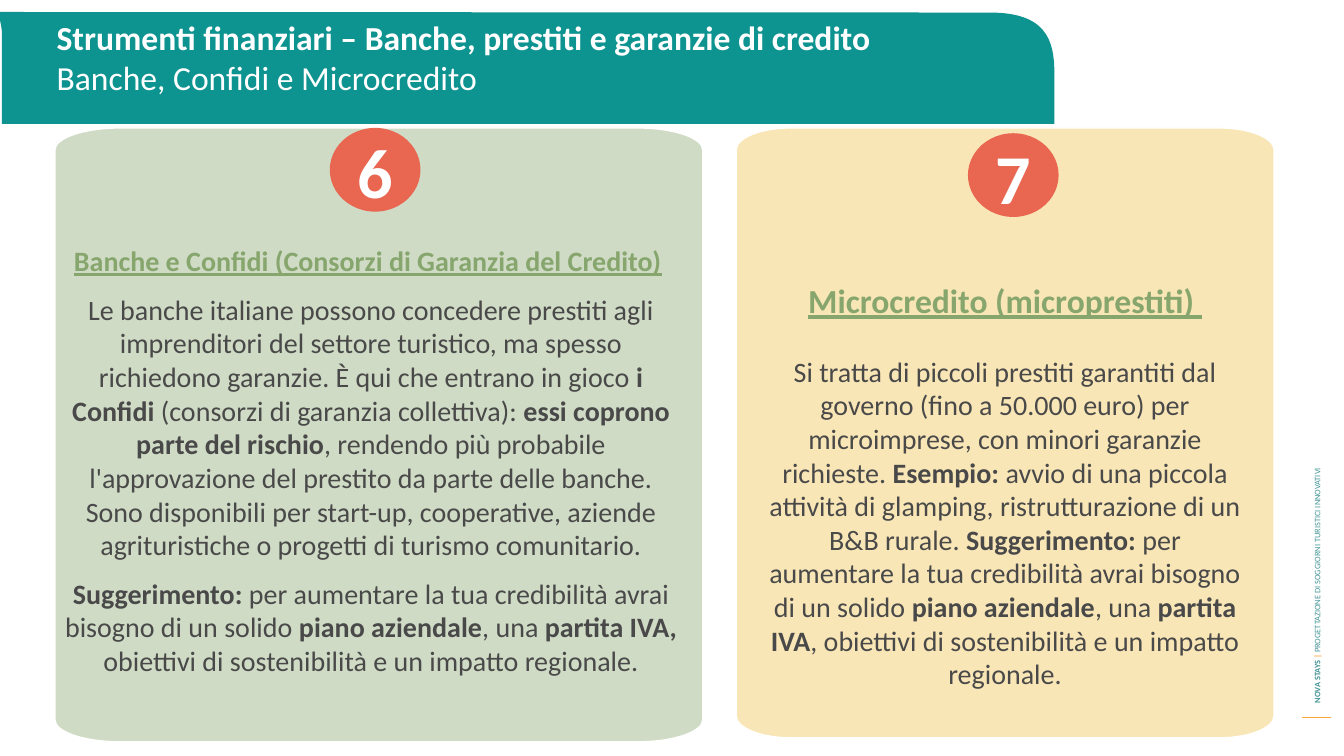
"""Builds the slide on bank loans, guarantee consortia and microcredit."""
from lxml.etree import SubElement
from pptx import Presentation
from pptx.dml.color import RGBColor
from pptx.enum.shapes import MSO_CONNECTOR as CONN, MSO_SHAPE as SHAPE
from pptx.enum.text import MSO_ANCHOR as ANCHOR, PP_ALIGN as ALIGN
from pptx.oxml.ns import qn
from pptx.util import Pt

TEAL, CORAL, WHITE = "0D9390", "E96751", "FFFFFF"
HEADING, BODY = "87A66E", "494949"
FOOTER, ORANGE = "459597", "FBA63B"

TITLE = [
    {"runs": [("*Strumenti finanziari – Banche, prestiti e garanzie di credito*", WHITE)]},
    {"runs": [("Banche, Confidi e Microcredito", WHITE)]},
]
FOOTER_RUNS = [("*NOVA STAYS *", FOOTER), ("*| *", ORANGE),
               ("PROGETTAZIONE DI SOGGIORNI TURISTICI INNOVATIVI", FOOTER)]
BANNER = [
    [(-1.4, 8.6)],
    [(707, 9)],
    [(746.6, 9), (753.1, 28.1), (753.1, 51.8)],
    [(753.1, 88.6)],
    [(1.4, 88.6)],
    [(1.4, 24.5)],
    [(1.4, 20.9), (0.7, 18), (0, 14.4)],
]
CARDS = [
    {
        "number": "6", "fill": "CFDBC5", "box": (39.2, 91.4, 462.8, 438.5),
        "radius": 46.6, "badge": (235.6, 91.4),
        "text_box": (38.9, 170.6, 452.2, 319.7),
        "heading": [("*Banche e Confidi (Consorzi di Garanzia del Credito)*", HEADING, True),
                    ("* *", BODY)],
        "heading_size": 20, "gap": 10.7,
        "body": [
            "Le banche italiane possono concedere prestiti agli imprenditori del "
            "settore turistico, ma spesso richiedono garanzie. È qui che entrano in "
            "gioco *i Confidi *(consorzi di garanzia collettiva): *essi coprono parte "
            "del rischio*, rendendo più probabile l'approvazione del prestito da parte "
            "delle banche. Sono disponibili per start-up, cooperative, aziende "
            "agrituristiche o progetti di turismo comunitario.",
            "*Suggerimento: *per aumentare la tua credibilità avrai bisogno di un "
            "solido *piano aziendale*, una *partita IVA, *obiettivi di sostenibilità "
            "e un impatto regionale.",
        ],
    },
    {
        "number": "7", "fill": "F9E6B6", "box": (525.8, 91.4, 384.3, 435.6),
        "radius": 38.9, "badge": (691.4, 95.2),
        "text_box": (539.7, 196.5, 356.4, 302.5),
        "heading": [("*Microcredito (microprestiti) *", HEADING, True)],
        "heading_size": 24, "gap": 24.2,
        "body": [
            "Si tratta di piccoli prestiti garantiti dal governo (fino a 50.000 euro) "
            "per microimprese, con minori garanzie richieste. *Esempio: *avvio di una "
            "piccola attività di glamping, ristrutturazione di un B&B rurale. "
            "*Suggerimento: *per aumentare la tua credibilità avrai bisogno di un "
            "solido *piano aziendale*, una *partita IVA*, obiettivi di sostenibilità "
            "e un impatto regionale.",
        ],
    },
]
BADGE_W, BADGE_H = 64.8, 59.8
CARD_RY, ARC = 15.8, 0.45


def rgb(value):
    return RGBColor.from_string(value)


def paint(shape, fill, line=None):
    shape.shadow.inherit = False
    shape.fill.solid()
    shape.fill.fore_color.rgb = rgb(fill)
    if line:
        shape.line.color.rgb = rgb(line)
        shape.line.width = Pt(1)
    else:
        shape.line.fill.background()


def card_outline(box, rx, ry):
    x, y, w, h = box
    r, b = x + w, y + h
    kx, ky = rx * ARC, ry * ARC
    return [
        [(x, y + ry)],
        [(x, y + ky), (x + kx, y), (x + rx, y)],
        [(r - rx, y)],
        [(r - kx, y), (r, y + ky), (r, y + ry)],
        [(r, b - ry)],
        [(r, b - ky), (r - kx, b), (r - rx, b)],
        [(x + rx, b)],
        [(x + kx, b), (x, b - ky), (x, b - ry)],
    ]


def add_outline(slide, steps, fill, line=None):
    """Draw a closed outline; a step of three points is a Bezier curve."""
    start, *rest = [(Pt(a), Pt(b)) for step in steps for a, b in step]
    builder = slide.shapes.build_freeform(*start)
    builder.add_line_segments(rest, close=True)
    s = builder.convert_to_shape()
    lines = s._element.findall(".//" + qn("a:lnTo"))
    for step in steps[1:]:
        used, lines = lines[:len(step)], lines[len(step):]
        if len(used) == 3:
            used[0].tag = qn("a:cubicBezTo")
            for extra in used[1:]:
                used[0].append(extra[0])
                extra.getparent().remove(extra)
    paint(s, fill, line)


def add_text(slide, box, paragraphs, size=20, align=ALIGN.LEFT,
             anchor=ANCHOR.TOP, rotation=0):
    s = slide.shapes.add_textbox(*map(Pt, box))
    s.rotation = rotation
    tf = s.text_frame
    tf.word_wrap = True
    tf.vertical_anchor = anchor
    for i, item in enumerate(paragraphs):
        p = tf.paragraphs[0] if i == 0 else tf.add_paragraph()
        p.alignment = align
        if item.get("before"):
            p.space_before = Pt(item["before"])
        for text, color, *underline in item["runs"]:
            for j, part in enumerate(text.split("*")):
                if part:
                    r = p.add_run()
                    r.text = part
                    r.font.name = "Calibri"
                    r.font.size = Pt(item.get("size", size))
                    r.font.bold = j % 2 == 1
                    r.font.underline = bool(underline)
                    r.font.color.rgb = rgb(color)


def add_card(slide, card):
    outline = card_outline(card["box"], card["radius"], CARD_RY)
    add_outline(slide, outline, card["fill"], WHITE)
    heading = {"runs": card["heading"], "size": card["heading_size"]}
    body = [{"runs": [(text, BODY)], "before": card["gap"]} for text in card["body"]]
    add_text(slide, card["text_box"], [heading] + body, align=ALIGN.CENTER)
    x, y = card["badge"]
    badge = slide.shapes.add_shape(SHAPE.OVAL, Pt(x), Pt(y), Pt(BADGE_W), Pt(BADGE_H))
    paint(badge, CORAL)
    add_text(slide, (x + 1.4, y - 2.9, 62, 67.7),
             [{"runs": [(f"*{card['number']}*", WHITE)]}], size=50, align=ALIGN.CENTER)


def main():
    prs = Presentation()
    prs.slide_width, prs.slide_height = Pt(960), Pt(540)
    slide = prs.slides.add_slide(prs.slide_layouts[6])

    rule = slide.shapes.add_connector(CONN.STRAIGHT, Pt(930.2), Pt(512.6),
                                      Pt(951.1), Pt(512.6))
    rule.line.color.rgb = rgb("FBA63D")
    rule.line.width = Pt(0.75)
    SubElement(rule._element.spPr, qn("a:effectLst"))
    add_text(slide, (733, 294.5, 415.4, 14.4), [{"runs": FOOTER_RUNS}], size=6,
             anchor=ANCHOR.MIDDLE, rotation=270)

    add_outline(slide, BANNER, TEAL)
    add_text(slide, (33.4, 8.6, 672.5, 101.5), TITLE, size=24)

    for card in CARDS:
        add_card(slide, card)
    prs.save("out.pptx")


if __name__ == "__main__":
    main()
